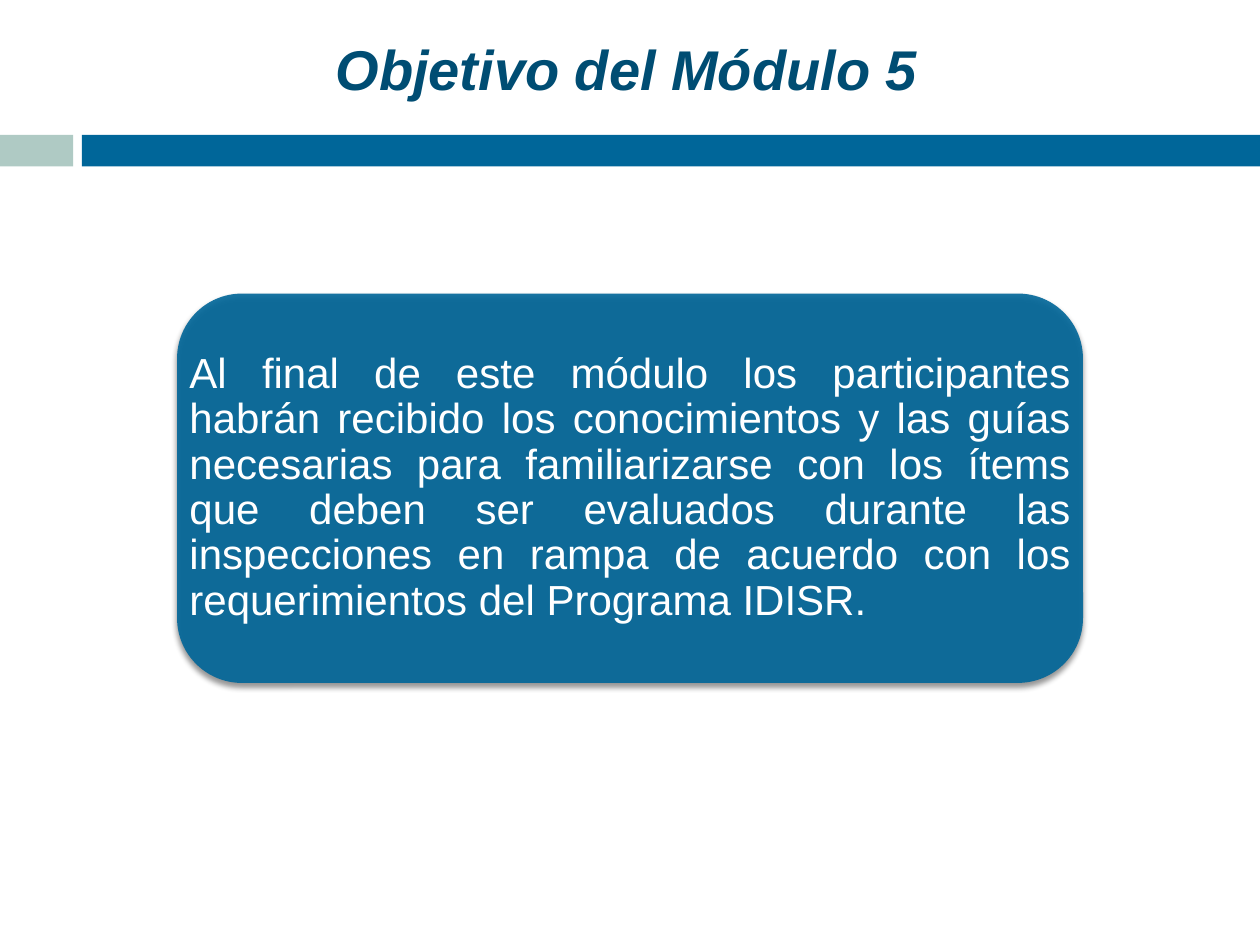
"""Build the slide that states the objective of module 5."""
from lxml import etree
from pptx import Presentation
from pptx.dml.color import RGBColor
from pptx.enum import shapes, text
from pptx.oxml import ns
from pptx.util import Inches, Pt

TITLE = "Objetivo del Módulo 5"
OBJECTIVE = (
    "Al final de este módulo los participantes habrán recibido los "
    "conocimientos y las guías necesarias para familiarizarse con los ítems "
    "que deben ser evaluados durante las inspecciones en rampa de acuerdo con "
    "los requerimientos del Programa IDISR."
)
COLORS = {"sage": "AFCAC4", "blue": "006699", "navy": "004D73",
          "white": "FFFFFF", "black": "000000"}
FONT = "Arial"
WIDTH, HEIGHT = 10, 7.5
BAND_TOP, BAND_HEIGHT = 1.07, 0.25
BANDS = [("sage", 0, 0.58), ("blue", 0.65, WIDTH - 0.65)]
TITLE_BOX = (0.27, 0.21, 9.41, 0.66)
PANEL_WIDTH, PANEL_HEIGHT, PANEL_TOP = 7.19, 3.09, 2.33
PANEL_BOX = ((WIDTH - PANEL_WIDTH) / 2, PANEL_TOP, PANEL_WIDTH, PANEL_HEIGHT)
PANEL_OPACITY, SHADOW_OPACITY = 90, 45
SHADOW_BLUR, SHADOW_DISTANCE, SHADOW_ANGLE = 3, 2.4, 90


def inches(box):
    return [Inches(length) for length in box]


def add_block(slide, kind, box, color):
    block = slide.shapes.add_shape(kind, *inches(box))
    block.shadow.inherit = False
    block.fill.solid()
    block.fill.fore_color.rgb = RGBColor.from_string(COLORS[color])
    block.line.fill.background()
    return block


def set_opacity(color_element, percent):
    etree.SubElement(color_element, ns.qn("a:alpha"), val=str(percent * 1000))


def add_shadow(block):
    effects = block._element.spPr.find(ns.qn("a:effectLst"))
    shadow = etree.SubElement(
        effects, ns.qn("a:outerShdw"), blurRad=str(Pt(SHADOW_BLUR)),
        dist=str(Pt(SHADOW_DISTANCE)), dir=str(SHADOW_ANGLE * 60000),
        rotWithShape="0")
    tint = etree.SubElement(shadow, ns.qn("a:srgbClr"), val=COLORS["black"])
    set_opacity(tint, SHADOW_OPACITY)


def write(frame, wording, size, color, align, inset, strong=None):
    frame.text = wording
    frame.word_wrap = True
    frame.auto_size = text.MSO_AUTO_SIZE.NONE
    frame.vertical_anchor = text.MSO_ANCHOR.MIDDLE
    frame.margin_left = frame.margin_right = Inches(inset)
    frame.margin_top = frame.margin_bottom = Inches(inset)
    paragraph = frame.paragraphs[0]
    paragraph.alignment = align
    font = paragraph.runs[0].font
    font.name, font.size = FONT, Pt(size)
    font.bold = font.italic = strong
    font.color.rgb = RGBColor.from_string(COLORS[color])
    return paragraph


def main():
    deck = Presentation()
    deck.slide_width, deck.slide_height = Inches(WIDTH), Inches(HEIGHT)
    slide = deck.slides.add_slide(deck.slide_layouts[5])

    for color, left, width in BANDS:
        add_block(slide, shapes.MSO_SHAPE.RECTANGLE,
                  (left, BAND_TOP, width, BAND_HEIGHT), color)

    title = slide.shapes.title
    title.left, title.top, title.width, title.height = inches(TITLE_BOX)
    write(title.text_frame, TITLE, 32, "navy", text.PP_ALIGN.CENTER, 0.05, True)

    panel = add_block(slide, shapes.MSO_SHAPE.ROUNDED_RECTANGLE, PANEL_BOX, "blue")
    set_opacity(panel._element.spPr.find(".//" + ns.qn("a:srgbClr")), PANEL_OPACITY)
    add_shadow(panel)

    objective = slide.shapes.add_textbox(*inches(PANEL_BOX))
    paragraph = write(objective.text_frame, OBJECTIVE, 24, "white",
                      text.PP_ALIGN.JUSTIFY, 0.1)
    paragraph.line_spacing = 0.9

    deck.save("out.pptx")


if __name__ == "__main__":
    main()
